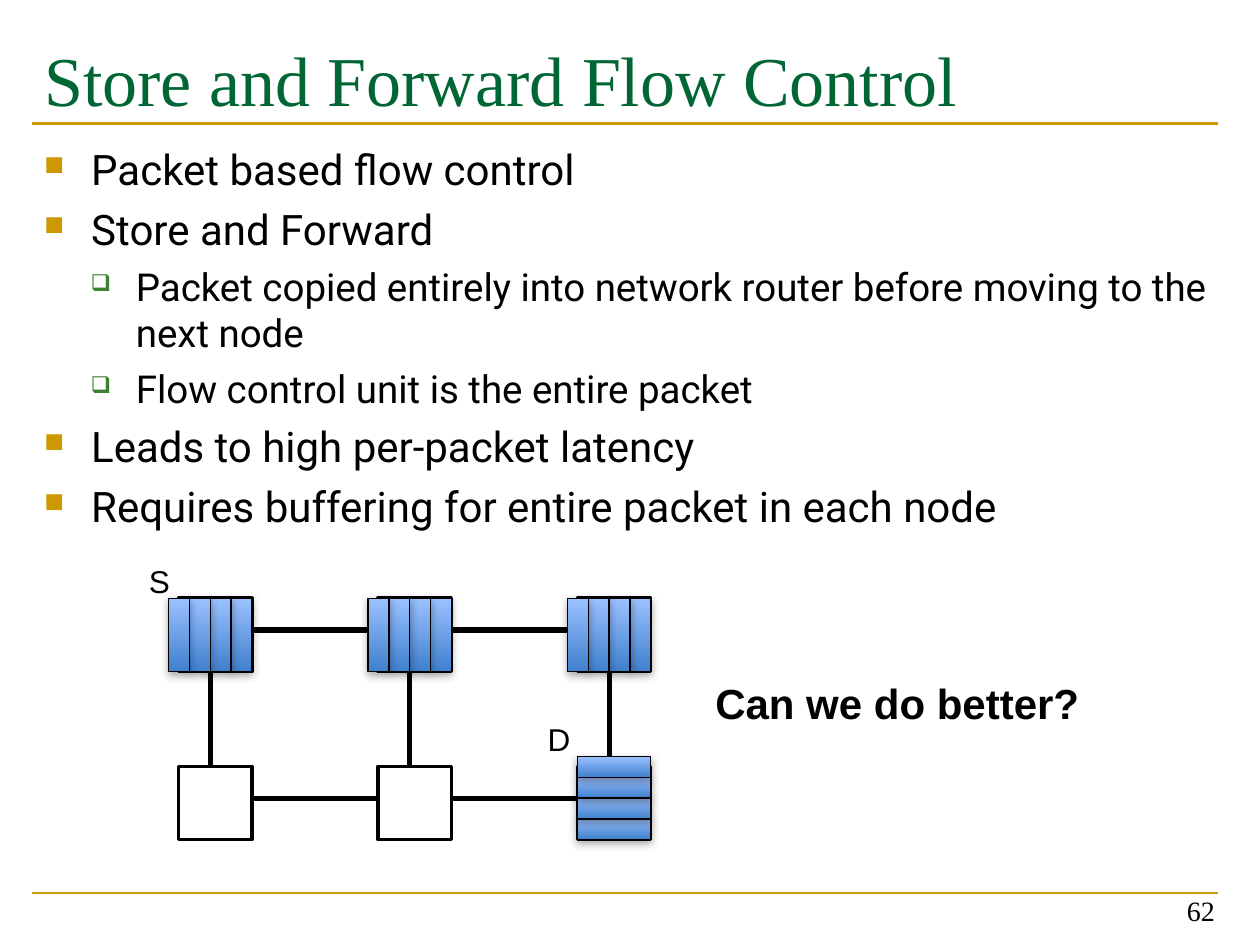
from collections import namedtuple
from dataclasses import dataclass

import pptx
import pptx.dml.color
import pptx.enum.shapes
import pptx.enum.text
import pptx.oxml.ns
import pptx.util
from lxml import etree

Cm, Pt = pptx.util.Cm, pptx.util.Pt
ALIGN, ANCHOR = pptx.enum.text.PP_ALIGN, pptx.enum.text.MSO_ANCHOR
Box = namedtuple("Box", "left top width height")  # centimetres
Bullet = namedtuple("Bullet", "char color percent size left hanging space")


@dataclass(frozen=True)
class Theme:
    ink: str = "000000"
    title: str = "006633"
    gold: str = "CC9900"
    green: str = "3B812F"
    flit_dark: str = "3F80CD"
    flit_light: str = "9BC1FF"
    serif: str = "Times New Roman"
    sans: str = "Arial"
    body: str = "Roboto"
    title_size: int = 40
    question_size: int = 24
    label_size: int = 18
    number_size: int = 16


THEME = Theme()
BULLETS = (
    Bullet("■", THEME.gold, 65, 24, 0.95, 0.95, 5.6),
    Bullet("❑", THEME.green, 60, 22, 1.85, 0.91, 5.2),
)
POINTS = (
    (0, "Packet based flow control"),
    (0, "Store and Forward"),
    (1, "Packet copied entirely into network router before moving to the next node"),
    (1, "Flow control unit is the entire packet"),
    (0, "Leads to high per-packet latency"),
    (0, "Requires buffering for entire packet in each node"),
)


def rgb(color):
    return pptx.dml.color.RGBColor.from_string(color)


def add_xml(parent, tag, **attributes):
    return etree.SubElement(parent, pptx.oxml.ns.qn(tag), attributes)


def add_frame(page, box, anchor=ANCHOR.TOP):
    frame = page.shapes.add_textbox(*map(Cm, box)).text_frame
    frame.word_wrap = True
    frame.vertical_anchor = anchor
    return frame


def add_span(para, text, font, size, color=THEME.ink, bold=False):
    span = para.add_run()
    span.text = text
    span.font.name = font
    span.font.size = Pt(size)
    span.font.bold = bold
    span.font.color.rgb = rgb(color)


def add_line(page, x1, y1, x2, y2, color, weight):
    line = page.shapes.add_connector(
        pptx.enum.shapes.MSO_CONNECTOR.STRAIGHT, Cm(x1), Cm(y1), Cm(x2), Cm(y2))
    line.line.color.rgb = rgb(color)
    line.line.width = Pt(weight)
    add_xml(line._element.spPr, "a:effectLst")


def add_rectangle(page, box, weight):
    """Add an unfilled, black-edged rectangle."""
    shape = page.shapes.add_shape(
        pptx.enum.shapes.MSO_SHAPE.RECTANGLE, *map(Cm, box))
    shape.shadow.inherit = False
    shape.fill.background()
    shape.line.color.rgb = rgb(THEME.ink)
    shape.line.width = Pt(weight)
    return shape


def add_flit(page, box):
    """Add one shaded slice of a packet."""
    flit = add_rectangle(page, box, 0.75)
    flit.fill.gradient()
    flit.fill.gradient_angle = 90
    for stop, color in zip(flit.fill.gradient_stops, (THEME.flit_dark, THEME.flit_light)):
        stop.color.rgb = rgb(color)
    effects = flit._element.spPr.find(pptx.oxml.ns.qn("a:effectLst"))
    shadow = add_xml(effects, "a:outerShdw", blurRad=str(Pt(5)), dist=str(Pt(1.8)),
                     dir="5400000", rotWithShape="0")
    shade = add_xml(shadow, "a:srgbClr", val=THEME.ink)
    add_xml(shade, "a:alpha", val="35000")


def add_packet(page, node, stacked=False, count=4, flit=0.42):
    """Fill a node with flits that end at its right edge, or at its bottom if stacked."""
    for index in range(1, count + 1):
        if stacked:
            top = node.top + node.height - index * flit
            add_flit(page, node._replace(top=top, height=flit))
        else:
            left = node.left + node.width - index * flit
            add_flit(page, node._replace(left=left, width=flit))


def add_title(page, box):
    frame = add_frame(page, box)
    frame.margin_top = Cm(0.3)
    add_span(frame.paragraphs[0], "Store and Forward Flow Control",
             THEME.serif, THEME.title_size, THEME.title)


def add_points(page, box):
    frame = add_frame(page, box)
    for index, (level, text) in enumerate(POINTS):
        bullet = BULLETS[level]
        para = frame.add_paragraph() if index else frame.paragraphs[0]
        para.level = level
        if index:
            para.space_before = Pt(bullet.space)
        add_span(para, text, THEME.body, bullet.size)
        layout = para._p.get_or_add_pPr()
        layout.set("marL", str(Cm(bullet.left)))
        layout.set("indent", str(-Cm(bullet.hanging)))
        add_xml(add_xml(layout, "a:buClr"), "a:srgbClr", val=bullet.color)
        add_xml(layout, "a:buSzPct", val=str(bullet.percent * 1000))
        add_xml(layout, "a:buChar", char=bullet.char)


def add_network(page, box):
    """Draw the mesh of two rows and three columns, with packets from S to D."""
    side, link = 1.48, 0.64
    column_step = (box.width - side) / 2
    row_step = box.height - side
    mesh = [[Box(box.left + column * column_step, box.top + row * row_step, side, side)
             for column in range(3)] for row in range(2)]
    for row in mesh:
        for node in row:
            add_rectangle(page, node, 2)
    for row in mesh:
        y = row[0].top + link
        for start, end in zip(row, row[1:]):
            add_line(page, start.left + side, y, end.left, y, THEME.ink, 3)
    for upper, lower in zip(*mesh):
        x = upper.left + link
        add_line(page, x, upper.top + side, x, lower.top, THEME.ink, 3)

    source, target = mesh[0][0], mesh[1][2]
    for name, node, rise in (("S", source, 0.85), ("D", target, 1.06)):
        frame = add_frame(page, Box(node.left - 0.85, node.top - rise, 1.9, 1.02))
        add_span(frame.paragraphs[0], name, THEME.sans, THEME.label_size)
    for node in mesh[0]:
        add_packet(page, node)
    add_packet(page, target, stacked=True)


def add_question(page, box):
    para = add_frame(page, box).paragraphs[0]
    add_span(para, "Can we do better?", THEME.sans, THEME.question_size, bold=True)


def add_page_number(page, box):
    para = add_frame(page, box, ANCHOR.BOTTOM).paragraphs[0]
    para.alignment = ALIGN.RIGHT
    add_span(para, "62", THEME.serif, THEME.number_size)


def main():
    deck = pptx.Presentation()
    deck.slide_width, deck.slide_height = Cm(25.4), Cm(19.05)
    page = deck.slides.add_slide(deck.slide_layouts[6])
    for y in (18, 2.49):
        add_line(page, 0.64, y, 24.56, y, THEME.gold, 1.5)
    add_title(page, Box(0.64, 0.43, 23.93, 2.97))
    add_points(page, Box(0.64, 2.77, 23.93, 14.43))
    add_page_number(page, Box(18.82, 17.55, 5.92, 1.27))
    add_question(page, Box(14.17, 13.54, 8.05, 2.06))
    add_network(page, Box(3.6, 12.06, 9.52, 4.87))
    deck.save("out.pptx")


if __name__ == "__main__":
    main()
